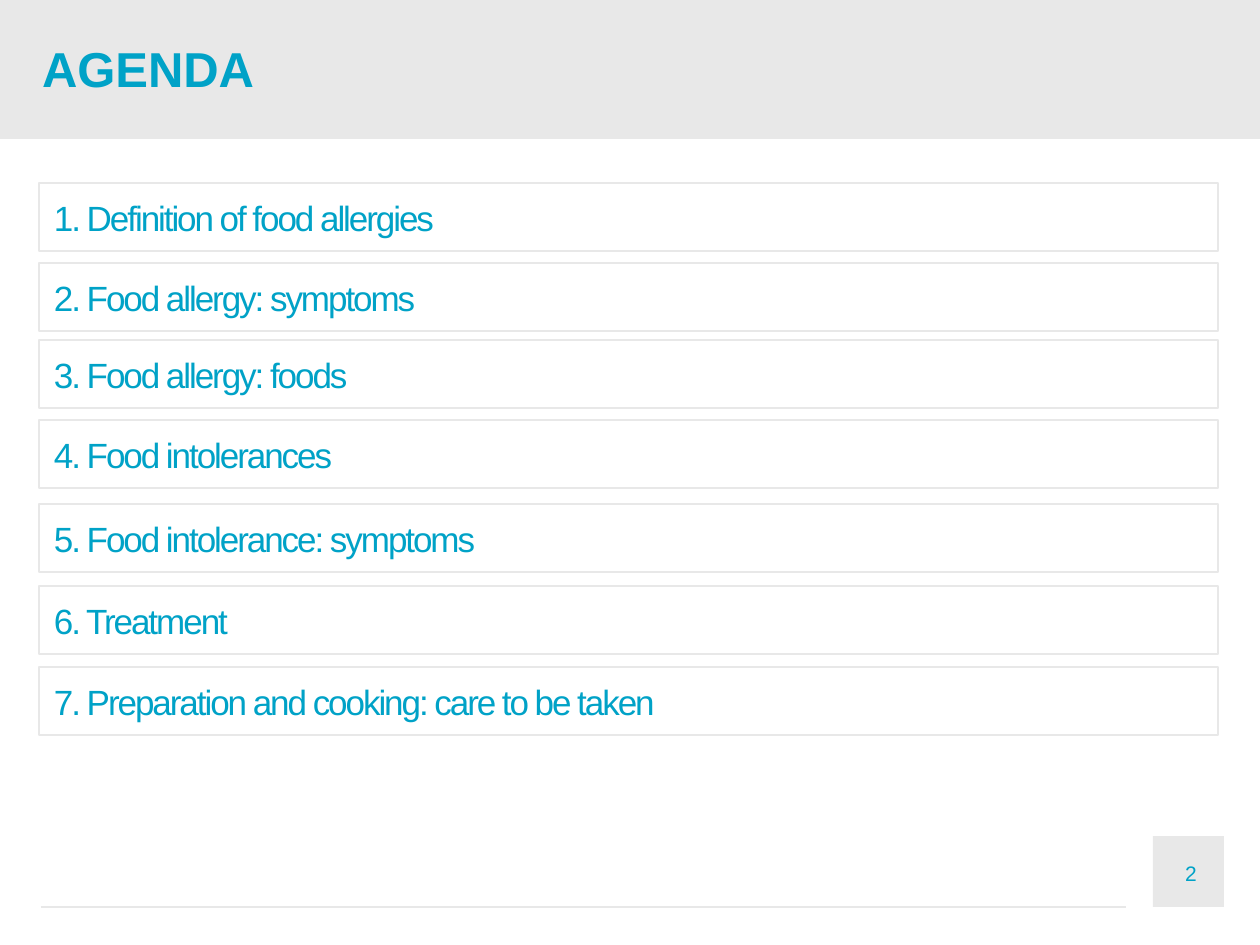
from copy import deepcopy
from dataclasses import dataclass

from lxml import etree
from pptx import Presentation
from pptx.dml.color import RGBColor
from pptx.enum.shapes import MSO_CONNECTOR, MSO_SHAPE
from pptx.enum.text import MSO_ANCHOR, MSO_AUTO_SIZE, PP_ALIGN
from pptx.oxml.ns import qn
from pptx.util import Pt

RECTANGLE = MSO_SHAPE.RECTANGLE
STRAIGHT = MSO_CONNECTOR.STRAIGHT
TOP, MIDDLE = MSO_ANCHOR.TOP, MSO_ANCHOR.MIDDLE
LEFT, CENTER = PP_ALIGN.LEFT, PP_ALIGN.CENTER
NO_AUTOFIT = MSO_AUTO_SIZE.NONE
EMU_PER_PX = 914400 / 126
FIRST_TOPIC_IDX = 20

TOPICS = [
    (183, "1. Definition of food allergies"),
    (263, "2. Food allergy: symptoms"),
    (340, "3. Food allergy: foods"),
    (420, "4. Food intolerances"),
    (504, "5. Food intolerance: symptoms"),
    (586, "6. Treatment"),
    (667, "7. Preparation and cooking: care to be taken"),
]


@dataclass(frozen=True)
class Theme:
    """Colours, typeface and sizes of the deck."""
    accent: RGBColor = RGBColor(0x00, 0xA2, 0xC7)
    panel: RGBColor = RGBColor(0xE8, 0xE8, 0xE8)
    face: str = "Arial"
    title: int = 28
    topic: int = 20
    page: int = 12
    rule: float = 0.75
    topic_tracking: int = -120


THEME = Theme()


def px(*lengths):
    """Turn pixel lengths into a list of EMU."""
    return [round(length * EMU_PER_PX) for length in lengths]


def place(shape, *box):
    """Move and size a shape to left, top, width and height in px."""
    shape.left, shape.top, shape.width, shape.height = px(*box)


def set_text(shape, text, size, anchor, align, insets, bold=False, wrap=True):
    """Fill a shape with one styled paragraph and return the paragraph."""
    frame = shape.text_frame
    frame.text = text
    frame.word_wrap = wrap
    frame.auto_size = NO_AUTOFIT
    frame.vertical_anchor = anchor
    (frame.margin_left, frame.margin_top,
     frame.margin_right, frame.margin_bottom) = px(*insets)
    paragraph = frame.paragraphs[0]
    paragraph.alignment = align
    paragraph.space_before = Pt(0)
    return paragraph, size, bold


def set_indent(paragraph, left):
    """Give a paragraph a left margin in px and no bullet."""
    properties = paragraph._p.get_or_add_pPr()
    properties.set("marL", str(px(left)[0]))
    properties.set("indent", "0")
    etree.SubElement(properties, qn("a:buNone"))


def set_font(paragraph, size, bold):
    """Apply the theme typeface and accent colour to a paragraph."""
    font = paragraph.font
    font.name, font.size, font.bold = THEME.face, Pt(size), bold
    font.color.rgb = THEME.accent


def add_panel(slide, *box):
    """Add a plain grey panel."""
    panel = slide.shapes.add_shape(RECTANGLE, *px(*box))
    panel.shadow.inherit = False
    panel.fill.solid()
    panel.fill.fore_color.rgb = THEME.panel
    panel.line.fill.background()


def add_rule(slide, *ends):
    """Add a thin grey line between two points."""
    rule = slide.shapes.add_connector(STRAIGHT, *px(*ends))
    rule.line.color.rgb = THEME.panel
    rule.line.width = Pt(THEME.rule)
    etree.SubElement(rule._element.spPr, qn("a:effectLst"))


def add_page_number(slide, number):
    """Add the page number over its panel."""
    page = slide.shapes.add_textbox(*px(1152, 848, 78, 50))
    styled = set_text(page, number, THEME.page, TOP, CENTER,
                      (25, 13, 25, 13), wrap=False)
    set_font(*styled)


def add_topic_slots(layout):
    """Give the layout one body placeholder for each topic."""
    body = layout.placeholders[1]._element
    for index in range(len(TOPICS)):
        slot = deepcopy(body)
        slot.nvSpPr.cNvPr.set("id", str(FIRST_TOPIC_IDX + index))
        slot.nvSpPr.nvPr.find(qn("p:ph")).set("idx", str(FIRST_TOPIC_IDX + index))
        layout.shapes._spTree.append(slot)
    body.getparent().remove(body)


def fill_title(slide, text):
    """Fill the title placeholder and bring it above the header."""
    title = slide.shapes.title
    slide.shapes._spTree.append(title._element)
    place(title, -1, 20, 905, 95)
    styled = set_text(title, text, THEME.title, MIDDLE, LEFT,
                      (13, 6, 13, 6), bold=True)
    set_indent(styled[0], 30)
    set_font(*styled)


def fill_topic(slide, index, top, text):
    """Fill one outlined topic placeholder."""
    topic = slide.placeholders[FIRST_TOPIC_IDX + index]
    place(topic, 39, top, 1179, 68)
    topic.line.color.rgb = THEME.panel
    topic.line.width = Pt(THEME.rule)
    styled = set_text(topic, text, THEME.topic, TOP, LEFT, (15, 13, 15, 15))
    set_indent(styled[0], 0)
    set_font(*styled)
    tracking = styled[0].runs[0]._r.get_or_add_rPr()
    tracking.set("spc", str(THEME.topic_tracking))


def main():
    """Build the agenda slide."""
    deck = Presentation()
    deck.slide_width, deck.slide_height = px(1260, 945)
    layout = deck.slide_layouts[1]
    add_topic_slots(layout)
    slide = deck.slides.add_slide(layout)
    add_panel(slide, 1153, 836, 71, 71)
    add_rule(slide, 41, 907, 1126, 907)
    add_panel(slide, 0, 0, 1260, 139)
    add_page_number(slide, "2")
    fill_title(slide, "AGENDA")
    for index, (top, text) in enumerate(TOPICS):
        fill_topic(slide, index, top, text)
    deck.save("out.pptx")


if __name__ == "__main__":
    main()
